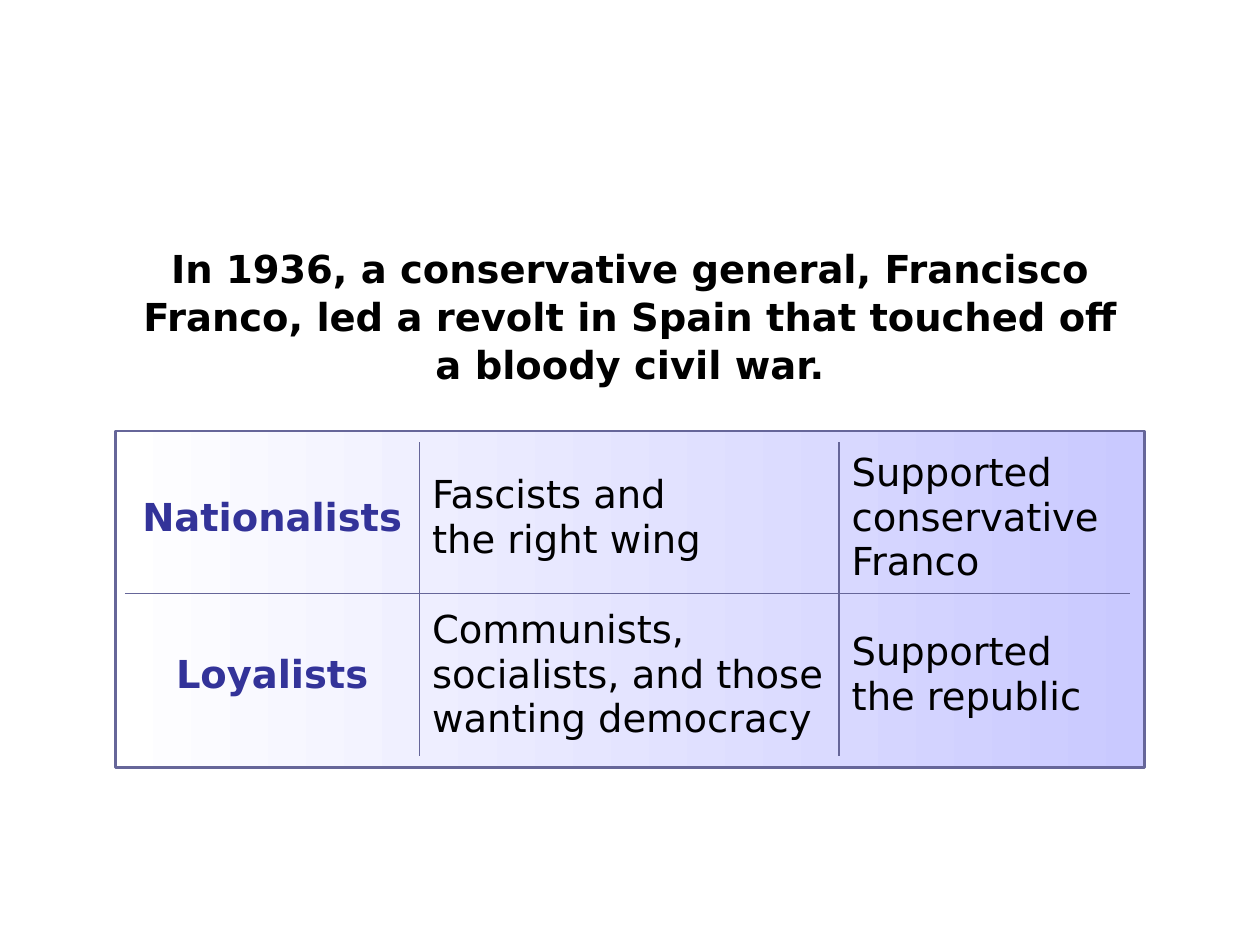
from dataclasses import dataclass

from lxml.etree import SubElement
from pptx import Presentation
from pptx.dml.color import RGBColor
from pptx.enum.shapes import MSO_SHAPE
from pptx.enum.text import MSO_ANCHOR, PP_ALIGN
from pptx.oxml.ns import qn
from pptx.util import Inches, Pt

# Content
HEADLINE = ("In 1936, a conservative general, Francisco Franco, "
            "led a revolt in Spain that touched off a bloody civil war.")
SIDES = [
    ("Nationalists", "Fascists and \nthe right wing", "Supported conservative Franco"),
    ("Loyalists", "Communists, socialists, and those wanting democracy",
     "Supported the republic"),
]

# Layout in inches
SLIDE_WIDTH, SLIDE_HEIGHT = 10, 7.5
PANEL_WIDTH, PANEL_HEIGHT = 8.17, 2.67
PANEL_LEFT, PANEL_TOP = (SLIDE_WIDTH - PANEL_WIDTH) / 2, 3.42
HEADLINE_TOP, HEADLINE_HEIGHT = 1.88, 1.57
COLUMN_WIDTHS = (2.34, 3.33, 2.31)
ROW_HEIGHTS = (1.2, 1.29)
TABLE_LEFT = 0.99
TABLE_TOP = PANEL_TOP + (PANEL_HEIGHT - sum(ROW_HEIGHTS)) / 2


@dataclass(frozen=True)
class Theme:
    font: str = "DejaVu Sans"
    size: int = 22
    text: str = "000000"
    accent: str = "333399"
    rule: str = "666699"
    panel_start: str = "FFFFFF"
    panel_end: str = "C9C9FF"
    panel_line: float = 1.5
    cell_line: float = 1


THEME = Theme()


def style_paragraph(paragraph, color, bold, alignment):
    paragraph.alignment = alignment
    font = paragraph.font
    font.name, font.size, font.bold = THEME.font, Pt(THEME.size), bold
    font.color.rgb = RGBColor.from_string(color)


def set_borders(cell, visible):
    """Draw the named sides (L, R, T, B) and clear the others."""
    properties = cell._tc.get_or_add_tcPr()
    for index, side in enumerate("LRTB"):
        line = SubElement(properties, qn(f"a:ln{side}"), w=str(Pt(THEME.cell_line)))
        if side in visible:
            fill = SubElement(line, qn("a:solidFill"))
            SubElement(fill, qn("a:srgbClr"), val=THEME.rule)
        else:
            SubElement(line, qn("a:noFill"))
        properties.insert(index, line)  # borders precede the cell fill


def add_panel(slide):
    panel = slide.shapes.add_shape(
        MSO_SHAPE.RECTANGLE, Inches(PANEL_LEFT), Inches(PANEL_TOP),
        Inches(PANEL_WIDTH), Inches(PANEL_HEIGHT))
    panel.shadow.inherit = False
    panel.fill.gradient()
    panel.fill.gradient_angle = 0
    colors = (THEME.panel_start, THEME.panel_end)
    for stop, color in zip(panel.fill.gradient_stops, colors):
        stop.color.rgb = RGBColor.from_string(color)
    panel.line.color.rgb = RGBColor.from_string(THEME.rule)
    panel.line.width = Pt(THEME.panel_line)


def add_headline(slide):
    box = slide.shapes.add_textbox(
        Inches(PANEL_LEFT), Inches(HEADLINE_TOP),
        Inches(PANEL_WIDTH), Inches(HEADLINE_HEIGHT))
    box.text_frame.word_wrap = True
    paragraph = box.text_frame.paragraphs[0]
    paragraph.text = HEADLINE
    paragraph.line_spacing = 1.04
    style_paragraph(paragraph, THEME.text, True, PP_ALIGN.CENTER)


def add_sides_table(slide):
    row_count, column_count = len(SIDES), len(COLUMN_WIDTHS)
    table = slide.shapes.add_table(
        row_count, column_count, Inches(TABLE_LEFT), Inches(TABLE_TOP),
        Inches(sum(COLUMN_WIDTHS)), Inches(sum(ROW_HEIGHTS))).table
    table.first_row = table.horz_banding = False
    for column, width in zip(table.columns, COLUMN_WIDTHS):
        column.width = Inches(width)
    for row, height in zip(table.rows, ROW_HEIGHTS):
        row.height = Inches(height)

    for row_index, texts in enumerate(SIDES):
        for column_index, text in enumerate(texts):
            cell = table.cell(row_index, column_index)
            cell.vertical_anchor = MSO_ANCHOR.MIDDLE
            cell.fill.background()
            paragraph = cell.text_frame.paragraphs[0]
            paragraph.text = text
            paragraph.space_before = Pt(2)
            if column_index == 0:
                style_paragraph(paragraph, THEME.accent, True, PP_ALIGN.CENTER)
            else:
                style_paragraph(paragraph, THEME.text, False, PP_ALIGN.LEFT)
            # Only the inner sides of the grid are ruled
            inner = {"L": column_index > 0, "R": column_index < column_count - 1,
                     "T": row_index > 0, "B": row_index < row_count - 1}
            set_borders(cell, [side for side, ruled in inner.items() if ruled])


def main():
    presentation = Presentation()
    presentation.slide_width = Inches(SLIDE_WIDTH)
    presentation.slide_height = Inches(SLIDE_HEIGHT)
    slide = presentation.slides.add_slide(presentation.slide_layouts[6])
    add_panel(slide)
    add_headline(slide)
    add_sides_table(slide)
    presentation.save("out.pptx")


if __name__ == "__main__":
    main()
